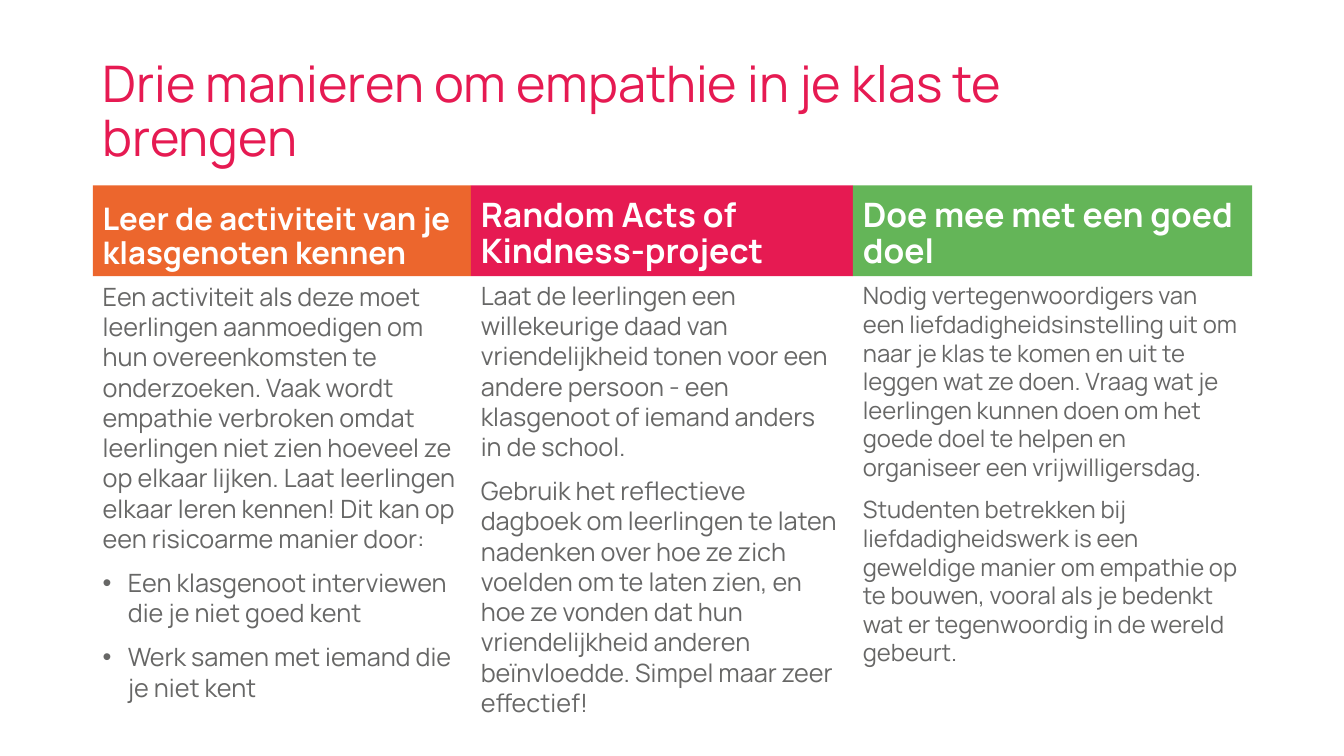
from lxml import etree
from pptx import Presentation
from pptx.dml.color import RGBColor
from pptx.enum.shapes import MSO_SHAPE
from pptx.enum.text import MSO_ANCHOR, PP_ALIGN
from pptx.oxml.ns import qn
from pptx.util import Inches, Pt

RECTANGLE = MSO_SHAPE.RECTANGLE
MIDDLE = MSO_ANCHOR.MIDDLE
BOTTOM = MSO_ANCHOR.BOTTOM
TOP = MSO_ANCHOR.TOP
LEFT = PP_ALIGN.LEFT

FONT = "Manrope"
COLORS = {
    "orange": "EC662D",
    "pink": "E61A52",
    "green": "64B558",
    "gray": "676766",
    "white": "FFFFFF",
}

TITLE = "Drie manieren om empathie in je klas te brengen"
COLUMNS = [
    {
        "heading": "Leer de activiteit van je klasgenoten kennen",
        "heading_size": 22.2,
        "color": "orange",
        "width": 3.75,
        "body_width": 3.75,
        "body_top": 2.74,
        "body_size": 18,
        "paragraphs": [
            "Een activiteit als deze moet leerlingen aanmoedigen om hun overeenkomsten te "
            "onderzoeken. Vaak wordt empathie verbroken omdat leerlingen niet zien hoeveel ze "
            "op elkaar lijken. Laat leerlingen elkaar leren kennen! Dit kan op een risicoarme "
            "manier door:",
        ],
        "bullets": [
            "Een klasgenoot interviewen die je niet goed kent",
            "Werk samen met iemand die je niet kent",
        ],
    },
    {
        "heading": "Random Acts of Kindness-project",
        "heading_size": 24,
        "color": "pink",
        "width": 3.79,
        "body_width": 3.75,
        "body_top": 2.73,
        "body_size": 18,
        "paragraphs": [
            "Laat de leerlingen een willekeurige daad van vriendelijkheid tonen voor een andere "
            "persoon - een klasgenoot of iemand anders in de school.",
            "Gebruik het reflectieve dagboek om leerlingen te laten nadenken over hoe ze zich "
            "voelden om te laten zien, en hoe ze vonden dat hun vriendelijkheid anderen "
            "beïnvloedde. Simpel maar zeer effectief!",
        ],
        "bullets": [],
    },
    {
        "heading": "Doe mee met een goed doel",
        "heading_size": 24,
        "color": "green",
        "width": 3.96,
        "body_width": 3.96,
        "body_top": 2.74,
        "body_size": 17,
        "paragraphs": [
            "Nodig vertegenwoordigers van een liefdadigheidsinstelling uit om naar je klas te "
            "komen en uit te leggen wat ze doen. Vraag wat je leerlingen kunnen doen om het "
            "goede doel te helpen en organiseer een vrijwilligersdag.",
            "Studenten betrekken bij liefdadigheidswerk is een geweldige manier om empathie op "
            "te bouwen, vooral als je bedenkt wat er tegenwoordig in de wereld gebeurt.",
        ],
        "bullets": [],
    },
]

LEFT_EDGE = 0.92
HEADING_TOP, HEADING_HEIGHT = 1.84, 0.9
BODY_HEIGHT = 4.03
BULLET_INDENT = 0.25


def rgb(name):
    return RGBColor.from_string(COLORS[name])


def add_bullet(paragraph):
    properties = paragraph._p.get_or_add_pPr()
    properties.set("marL", str(Inches(BULLET_INDENT)))
    properties.set("indent", str(-Inches(BULLET_INDENT)))
    bullet_font = etree.SubElement(properties, qn("a:buFont"))
    bullet_font.set("typeface", "Arial")
    bullet = etree.SubElement(properties, qn("a:buChar"))
    bullet.set("char", "•")


def write(shape, paragraphs, size, color, anchor, bullets=(), bold=False, spacing=None):
    frame = shape.text_frame
    frame.word_wrap = True
    frame.vertical_anchor = anchor
    for index, text in enumerate([*paragraphs, *bullets]):
        paragraph = frame.add_paragraph() if index else frame.paragraphs[0]
        paragraph.text = text
        paragraph.alignment = LEFT
        if spacing:
            paragraph.line_spacing = spacing
        if index:
            paragraph.space_before = Pt(10)
        if index >= len(paragraphs):
            add_bullet(paragraph)
        paragraph.font.name = FONT
        paragraph.font.size = Pt(size)
        paragraph.font.bold = bold
        paragraph.font.color.rgb = rgb(color)


def add_text(slide, left, top, width, height):
    return slide.shapes.add_textbox(Inches(left), Inches(top), Inches(width), Inches(height))


def add_column(slide, left, column):
    heading = slide.shapes.add_shape(
        RECTANGLE, Inches(left), Inches(HEADING_TOP), Inches(column["width"]), Inches(HEADING_HEIGHT)
    )
    heading.shadow.inherit = False
    heading.fill.solid()
    heading.fill.fore_color.rgb = rgb(column["color"])
    heading.line.fill.background()
    write(heading, [column["heading"]], column["heading_size"], "white", BOTTOM, bold=True, spacing=0.9)

    body = add_text(slide, left, column["body_top"], column["body_width"], BODY_HEIGHT)
    write(body, column["paragraphs"], column["body_size"], "gray", TOP, column["bullets"])


def main():
    presentation = Presentation()
    presentation.slide_width = Inches(13.33)
    presentation.slide_height = Inches(7.5)
    slide = presentation.slides.add_slide(presentation.slide_layouts[6])

    title = add_text(slide, LEFT_EDGE, 0.4, 9.35, 1.45)
    write(title, [TITLE], 36, "pink", MIDDLE, spacing=0.9)

    left = LEFT_EDGE
    for column in COLUMNS:
        add_column(slide, left, column)
        left += column["width"]

    presentation.save("out.pptx")


if __name__ == "__main__":
    main()
